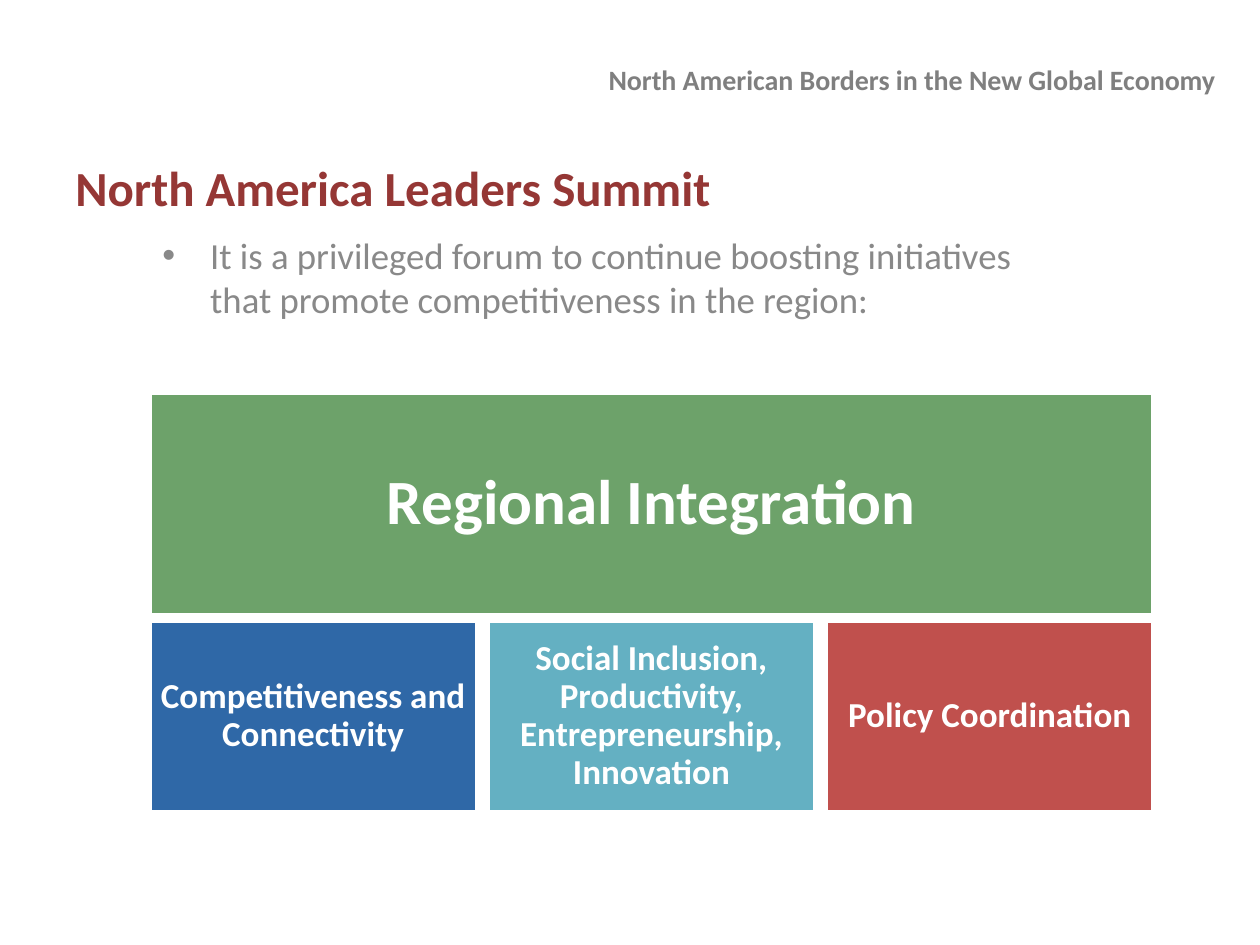
from lxml import etree
from pptx import Presentation
from pptx.dml.color import RGBColor
from pptx.enum.shapes import MSO_SHAPE as Shape
from pptx.enum.text import MSO_ANCHOR as Anchor, PP_ALIGN as Align
from pptx.oxml.ns import qn
from pptx.util import Inches, Pt


def color(code):
    return RGBColor.from_string(code)


def write(frame, text, size=20, ink="FFFFFF", bold=True, align=Align.LEFT,
          anchor=Anchor.TOP, inset=None, lines=None, bullet=None, indent=0.38):
    frame.word_wrap = True
    frame.vertical_anchor = anchor
    if inset is not None:
        frame.margin_left = frame.margin_right = Inches(inset)
        frame.margin_top = frame.margin_bottom = Inches(inset)
    para = frame.paragraphs[0]
    para.text = text
    para.alignment = align
    if lines:
        para.line_spacing = lines
    if bullet:
        props = para._p.get_or_add_pPr()
        props.set("marL", str(Inches(indent)))
        props.set("indent", str(-Inches(indent)))
        etree.SubElement(props, qn("a:buFont")).set("typeface", "Arial")
        etree.SubElement(props, qn("a:buChar")).set("char", bullet)
    font = para.runs[0].font
    font.name, font.size, font.bold = "Calibri", Pt(size), bold
    font.color.rgb = color(ink)


def add_title(slide, box, text):
    title = slide.shapes.title
    title.left, title.top, title.width, title.height = map(Inches, box)
    write(title.text_frame, text, size=16, ink="7F7F7F", align=Align.RIGHT,
          anchor=Anchor.MIDDLE)


def add_text(slide, box, text, **style):
    write(slide.shapes.add_textbox(*map(Inches, box)).text_frame, text, **style)


def add_block(slide, box, text, fill, **style):
    block = slide.shapes.add_shape(Shape.RECTANGLE, *map(Inches, box))
    block.shadow.inherit = False
    block.fill.solid()
    block.fill.fore_color.rgb = color(fill)
    block.line.color.rgb = color("FFFFFF")
    block.line.width = Pt(2)
    write(block.text_frame, text, align=Align.CENTER, anchor=Anchor.MIDDLE,
          lines=0.9, **style)


def add_pillars(slide, box, head, pillars):
    left, top, width, height = box
    roof, base, wide = 1.76, 1.51, 2.59
    # Wide block on top
    add_block(slide, (left, top, width, roof), head, "6DA26A", size=36, inset=0.15)
    # Equal blocks below, spread over the full width
    step = (width - wide) / (len(pillars) - 1)
    for i, (text, fill) in enumerate(pillars):
        add_block(slide, (left + i * step, top + height - base, wide, base),
                  text, fill, inset=0.08)


def main():
    deck = Presentation()
    deck.slide_width, deck.slide_height = Inches(10), Inches(7.5)
    slide = deck.slides.add_slide(deck.slide_layouts[5])

    # Headings
    add_title(slide, (0.75, 0.21, 9, 0.84),
              "North American Borders in the New Global Economy")
    add_text(slide, (0.5, 1.2, 7.48, 0.57), "North America Leaders Summit",
             size=28, ink="953735")
    add_text(slide, (1.19, 1.8, 7.24, 0.81),
             "It is a privileged forum to continue boosting initiatives "
             "that promote competitiveness in the region:",
             size=21, ink="898989", bold=False, bullet="•")

    # Integration diagram
    add_pillars(slide, (1.19, 3.12, 7.96, 3.32), "Regional Integration", [
        ("Competitiveness and Connectivity", "2F68A7"),
        ("Social Inclusion, Productivity, Entrepreneurship, Innovation", "64B0C2"),
        ("Policy Coordination", "C0504D"),
    ])
    deck.save("out.pptx")


if __name__ == "__main__":
    main()
